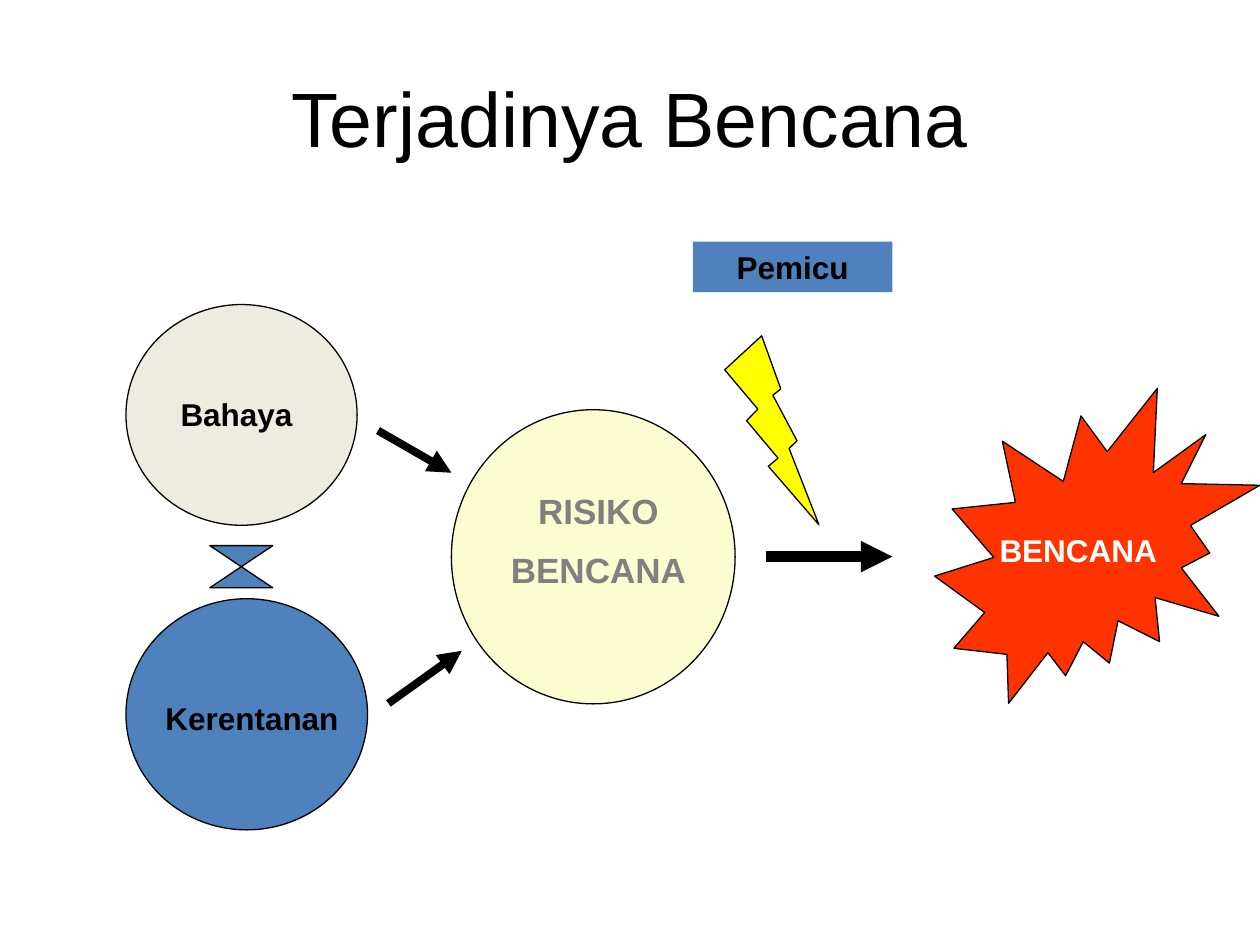
"""Build the slide on how a disaster comes about."""
from lxml.etree import SubElement
from pptx import Presentation
from pptx.dml.color import RGBColor
from pptx.enum.shapes import MSO_CONNECTOR as Connector, MSO_SHAPE as Shape
from pptx.enum.text import MSO_ANCHOR as Anchor, PP_ALIGN as Align
from pptx.oxml.ns import qn
from pptx.util import Cm, Pt


def color(value):
    return RGBColor.from_string(value)


class SlideBuilder:
    font = "Arial"
    black = "000000"
    blue = "4F81BD"

    def __init__(self, presentation):
        self.slide = presentation.slides.add_slide(presentation.slide_layouts[5])

    def set_text(self, frame, lines, size, ink, align=Align.CENTER, bold=True):
        frame.word_wrap = True
        frame.text = "\n".join(lines)
        for index, paragraph in enumerate(frame.paragraphs):
            paragraph.alignment = align
            paragraph.space_before = Pt(size / 2 if index else 0)
            font = paragraph.font
            font.name, font.size, font.bold = self.font, Pt(size), bold
            font.color.rgb = color(ink)

    def title(self, text, left, top, width, height):
        title = self.slide.shapes.title
        title.left, title.top = Cm(left), Cm(top)
        title.width, title.height = Cm(width), Cm(height)
        title.text_frame.vertical_anchor = Anchor.MIDDLE
        self.set_text(title.text_frame, [text], 44, self.black, bold=False)

    def shape(self, kind, left, top, width, height, fill, outlined=True):
        shape = self.slide.shapes.add_shape(kind, Cm(left), Cm(top), Cm(width), Cm(height))
        shape.shadow.inherit = False
        shape.fill.solid()
        shape.fill.fore_color.rgb = color(fill)
        if outlined:
            shape.line.color.rgb = color(self.black)
            shape.line.width = Pt(0.75)
        else:
            shape.line.fill.background()
        return shape

    def label(self, lines, left, top, width, height, size=18, ink=black, align=Align.CENTER):
        box = self.slide.shapes.add_textbox(Cm(left), Cm(top), Cm(width), Cm(height))
        self.set_text(box.text_frame, lines, size, ink, align)

    def arrow(self, start_x, start_y, end_x, end_y, width=4.5):
        arrow = self.slide.shapes.add_connector(
            Connector.STRAIGHT, Cm(start_x), Cm(start_y), Cm(end_x), Cm(end_y))
        arrow.line.color.rgb = color(self.black)
        arrow.line.width = Pt(width)
        properties = arrow.element.spPr
        SubElement(properties.find(qn("a:ln")), qn("a:tailEnd"), type="triangle")
        SubElement(properties, qn("a:effectLst"))


def main():
    presentation = Presentation()
    presentation.slide_width, presentation.slide_height = Cm(25.4), Cm(19.05)
    builder = SlideBuilder(presentation)
    builder.title("Terjadinya Bencana", 1.27, 0.76, 22.86, 3.18)

    builder.shape(Shape.OVAL, 2.54, 6.14, 4.66, 4.45, "EEECE1")
    builder.label(["Bahaya"], 3.39, 7.83, 3.18, 1.02, align=Align.LEFT)
    builder.shape(Shape.OVAL, 2.54, 12.07, 4.87, 4.66, builder.blue)
    builder.label(["Kerentanan"], 2.33, 13.97, 5.5, 1.02)
    builder.shape(Shape.OVAL, 9.1, 8.26, 5.72, 5.93, "FBFDD1")
    builder.label(["RISIKO", "BENCANA"], 9.95, 9.74, 4.23, 2.36, 20, "808080")

    builder.shape(Shape.FLOWCHART_COLLATE, 4.23, 11, 1.27, 0.85, builder.blue)
    builder.arrow(7.62, 8.68, 9.1, 9.53)
    builder.arrow(7.83, 14.18, 9.31, 13.12)

    builder.shape(Shape.LIGHTNING_BOLT, 14.61, 6.77, 1.9, 3.81, "FFFF00")
    builder.arrow(15.45, 11.22, 17.99, 11.22, 6)
    trigger = builder.shape(Shape.RECTANGLE, 13.97, 4.87, 4.02, 1.02, builder.blue, False)
    builder.set_text(trigger.text_frame, ["Pemicu"], 18, builder.black)

    builder.shape(Shape.EXPLOSION2, 18.84, 7.83, 6.56, 6.35, "FF3300")
    builder.label(["BENCANA"], 19.9, 10.58, 4.02, 1.02, ink="FFFFFF", align=Align.LEFT)
    presentation.save("out.pptx")


if __name__ == "__main__":
    main()
